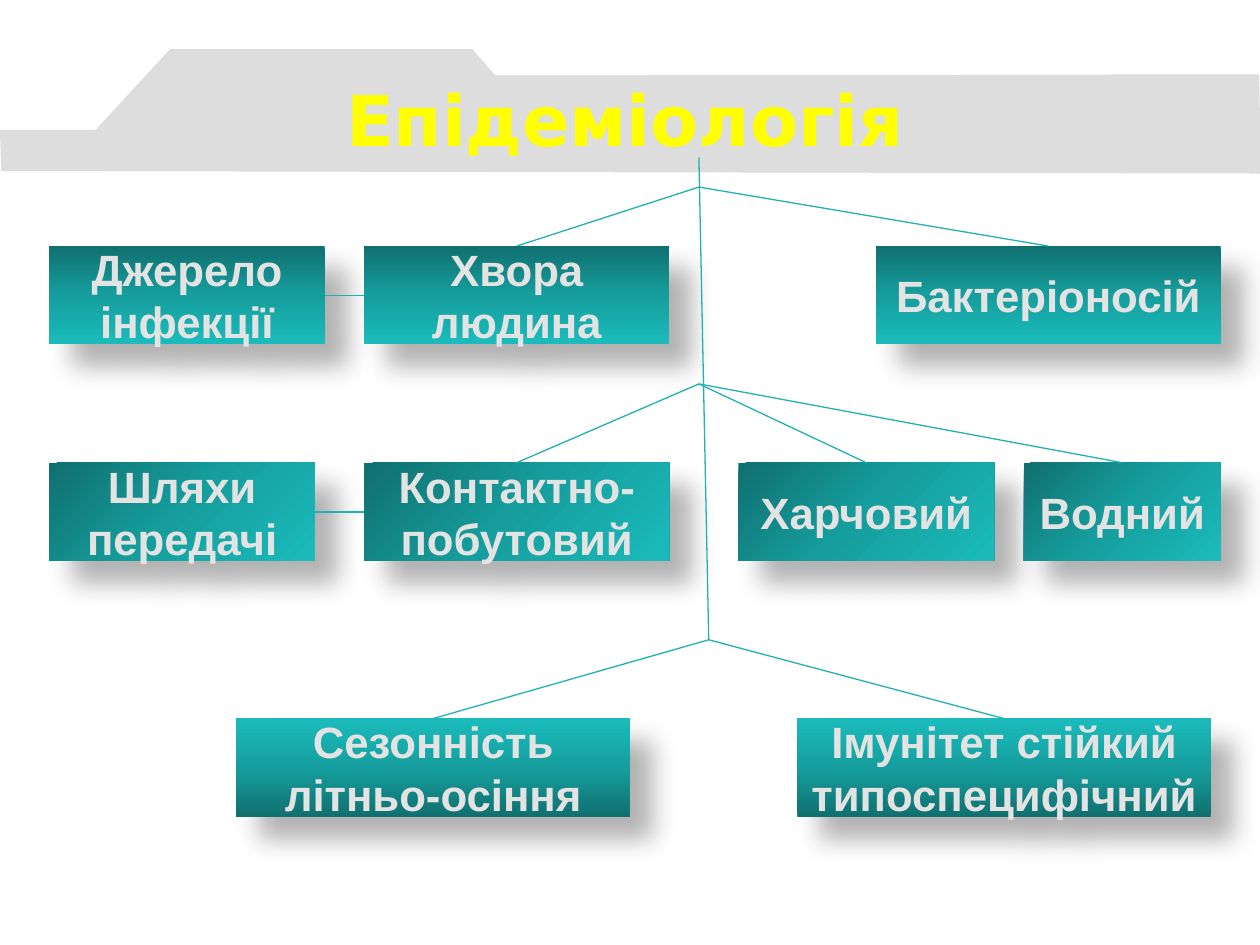
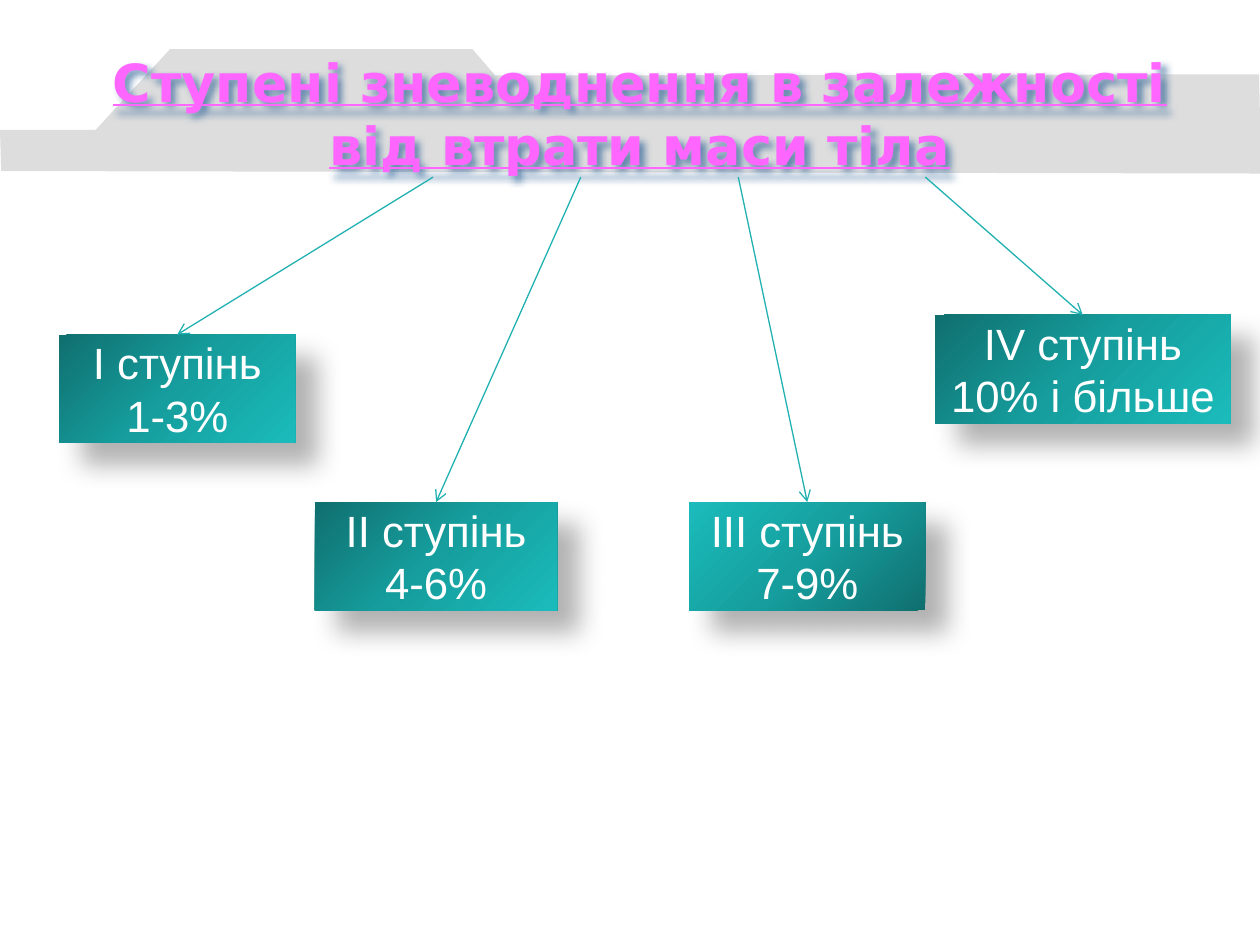
from dataclasses import dataclass

from lxml.etree import SubElement
from pptx import Presentation
from pptx.dml.color import RGBColor as Color
from pptx.enum.shapes import MSO_CONNECTOR as Connector, MSO_SHAPE as Preset
from pptx.enum.text import MSO_ANCHOR as Anchor, PP_ALIGN as Align
from pptx.oxml.ns import qn
from pptx.util import Pt


@dataclass(frozen=True)
class Theme:
    band: str = "DDDDDD"
    line: str = "21B1B1"
    gradient: tuple = ((0, "106F6F"), (50, "169E9E"), (100, "1BBBBB"))
    black: str = "000000"
    factor_text: str = "E3E3E3"
    degree_text: str = "FFFFFF"
    yellow: str = "FFFF00"
    pink: str = "FF66FF"
    title_shadow: str = "336699"
    title_font: str = "DejaVu Sans"
    body_font: str = "Arial"
    large_title: float = 40
    small_title: float = 30
    body_size: float = 25


THEME = Theme()

# Gradient directions, counter-clockwise
DOWN, UP, DIAGONAL, DIAGONAL_BACK = 270, 90, 315, 135
# Connection sites of a rectangle
TOP, LEFT, RIGHT = 0, 1, 3

BAND_OUTLINE = [(0, 74.2), (54.7, 74.2), (97.2, 28.1), (270, 28.1),
                (283, 43.2), (719.5, 42.5), (720.6, 99.2), (0.7, 97.8)]


def points(*values):
    return [Pt(value) for value in values]


def add_color(parent, value, opacity=100):
    color = SubElement(parent, qn("a:srgbClr"), val=value)
    if opacity < 100:
        SubElement(color, qn("a:alpha"), val=str(opacity * 1000))


def add_shadow(shape, color, opacity, blur, distance):
    shape.shadow.inherit = False
    effects = shape._element.spPr.find(qn("a:effectLst"))
    shadow = SubElement(effects, qn("a:outerShdw"), blurRad=str(Pt(blur)),
                        dist=str(Pt(distance)), dir="2700000", algn="ctr", rotWithShape="0")
    add_color(shadow, color, opacity)


def fill_gradient(shape, angle):
    shape.fill.gradient()
    shape.fill.gradient_angle = angle
    stops = shape._element.spPr.find(qn("a:gradFill")).find(qn("a:gsLst"))
    for stop in list(stops):
        stops.remove(stop)
    for position, color in THEME.gradient:
        add_color(SubElement(stops, qn("a:gs"), pos=str(position * 1000)), color)


def outline_run(run):
    properties = run.font._element
    line = SubElement(properties, qn("a:ln"), w=str(Pt(1)))
    add_color(SubElement(line, qn("a:solidFill")), THEME.black)
    properties.insert(0, line)


def write_text(shape, text, *, size, font, color, bold=False, underline=False, outlined=False):
    frame = shape.text_frame
    frame.word_wrap = True
    frame.vertical_anchor = Anchor.MIDDLE
    frame.text = text
    for paragraph in frame.paragraphs:
        paragraph.alignment = Align.CENTER
        for run in paragraph.runs:
            run.font.size = Pt(size)
            run.font.name = font
            run.font.color.rgb = Color.from_string(color)
            run.font.bold = bold
            run.font.underline = underline
            if outlined:
                outline_run(run)


def add_band(slide):
    start, *rest = [points(*point) for point in BAND_OUTLINE]
    builder = slide.shapes.build_freeform(*start)
    builder.add_line_segments(rest, close=True)
    band = builder.convert_to_shape()
    band.shadow.inherit = False
    band.fill.solid()
    band.fill.fore_color.rgb = Color.from_string(THEME.band)
    band.line.fill.background()


def add_title(slide, text, bounds, **text_format):
    title = slide.shapes.add_textbox(*points(*bounds))
    write_text(title, text, font=THEME.title_font, bold=True, **text_format)
    return title


def add_box(slide, text, bounds, angle, **text_format):
    box = slide.shapes.add_shape(Preset.RECTANGLE, *points(*bounds))
    fill_gradient(box, angle)
    box.line.fill.background()
    add_shadow(box, THEME.black, 30, blur=15, distance=18)
    write_text(box, text, size=THEME.body_size, font=THEME.body_font, **text_format)
    return box


def add_line(slide, start, end, arrow=False):
    """Each end is a point or a (box, connection site) pair."""
    line = slide.shapes.add_connector(Connector.STRAIGHT, 0, 0, 0, 0)
    line.begin_x, line.begin_y, line.end_x, line.end_y = (
        value for anchor in (start, end)
        for value in (points(*anchor) if isinstance(anchor[0], (int, float)) else (0, 0)))
    for anchor, connect in ((start, line.begin_connect), (end, line.end_connect)):
        if not isinstance(anchor[0], (int, float)):
            connect(*anchor)
    line.line.color.rgb = Color.from_string(THEME.line)
    line.line.width = Pt(0.75)
    properties = line._element.spPr
    if arrow:
        SubElement(properties.find(qn("a:ln")), qn("a:tailEnd"), type="arrow")
    SubElement(properties, qn("a:effectLst"))


def new_slide(presentation):
    slide = presentation.slides.add_slide(presentation.slide_layouts[6])
    add_band(slide)
    return slide


def build_epidemiology(presentation):
    slide = new_slide(presentation)
    add_title(slide, "Епідеміологія", (48.2, 45.4, 617.8, 44.6),
              size=THEME.large_title, color=THEME.yellow)

    # Rows of boxes: top, gradient direction, (text, left, width)
    rows = [
        (140.6, DOWN, [("Джерело інфекції", 28.1, 157.5), ("Хвора людина", 208.1, 174.4),
                       ("Бактеріоносій", 500.6, 196.9)]),
        (264.4, DIAGONAL, [("Шляхи передачі", 28.1, 151.9),
                           ("Контактно-побутовий", 208.1, 174.4),
                           ("Харчовий", 421.9, 146.2), ("Водний", 585, 112.5)]),
        (410.6, UP, [("Сезонність літньо-осіння", 135, 225),
                     ("Імунітет стійкий типоспецифічний", 455.6, 236.3)]),
    ]
    sources, routes, features = [
        [add_box(slide, text, (left, top, width, 56.25), angle,
                 color=THEME.factor_text, bold=True, outlined=True)
         for text, left, width in boxes]
        for top, angle, boxes in rows]

    # Trunk, row labels and branches
    source_hub, route_hub, feature_hub = (399.4, 106.9), (399.4, 219.4), (405, 365.6)
    add_line(slide, (399.4, 90), feature_hub)
    for label, first, *_ in (sources, routes):
        add_line(slide, (label, RIGHT), (first, LEFT))
    for hub, boxes in ((source_hub, sources[1:]), (route_hub, routes[1:]),
                       (feature_hub, features)):
        for box in boxes:
            add_line(slide, hub, (box, TOP))


def build_dehydration(presentation):
    slide = new_slide(presentation)
    title = add_title(slide, "Ступені зневоднення в залежності від втрати маси тіла",
                      (28.1, 33.8, 675, 61.9), size=THEME.small_title,
                      color=THEME.pink, underline=True)
    add_shadow(title, THEME.title_shadow, 70, blur=4, distance=2.8)

    # Degrees: text, left, top, width, gradient direction, arrow start
    degrees = [
        ("І ступінь\n1-3%", 33.8, 191.2, 135, DIAGONAL, 247.5),
        ("ІІ ступінь\n4-6%", 180, 286.9, 138.4, DIAGONAL, 331.9),
        ("ІІІ ступінь\n7-9%", 393.8, 286.9, 135, DIAGONAL_BACK, 421.9),
        ("IV ступінь\n10% і більше", 534.4, 180, 168.8, DIAGONAL, 528.8),
    ]
    for text, left, top, width, angle, arrow_left in degrees:
        box = add_box(slide, text, (left, top, width, 61.9), angle, color=THEME.degree_text)
        add_line(slide, (arrow_left, 101.2), (box, TOP), arrow=True)


def main():
    presentation = Presentation()
    presentation.slide_width, presentation.slide_height = points(720, 540)
    build_epidemiology(presentation)
    build_dehydration(presentation)
    presentation.save("out.pptx")


if __name__ == "__main__":
    main()
